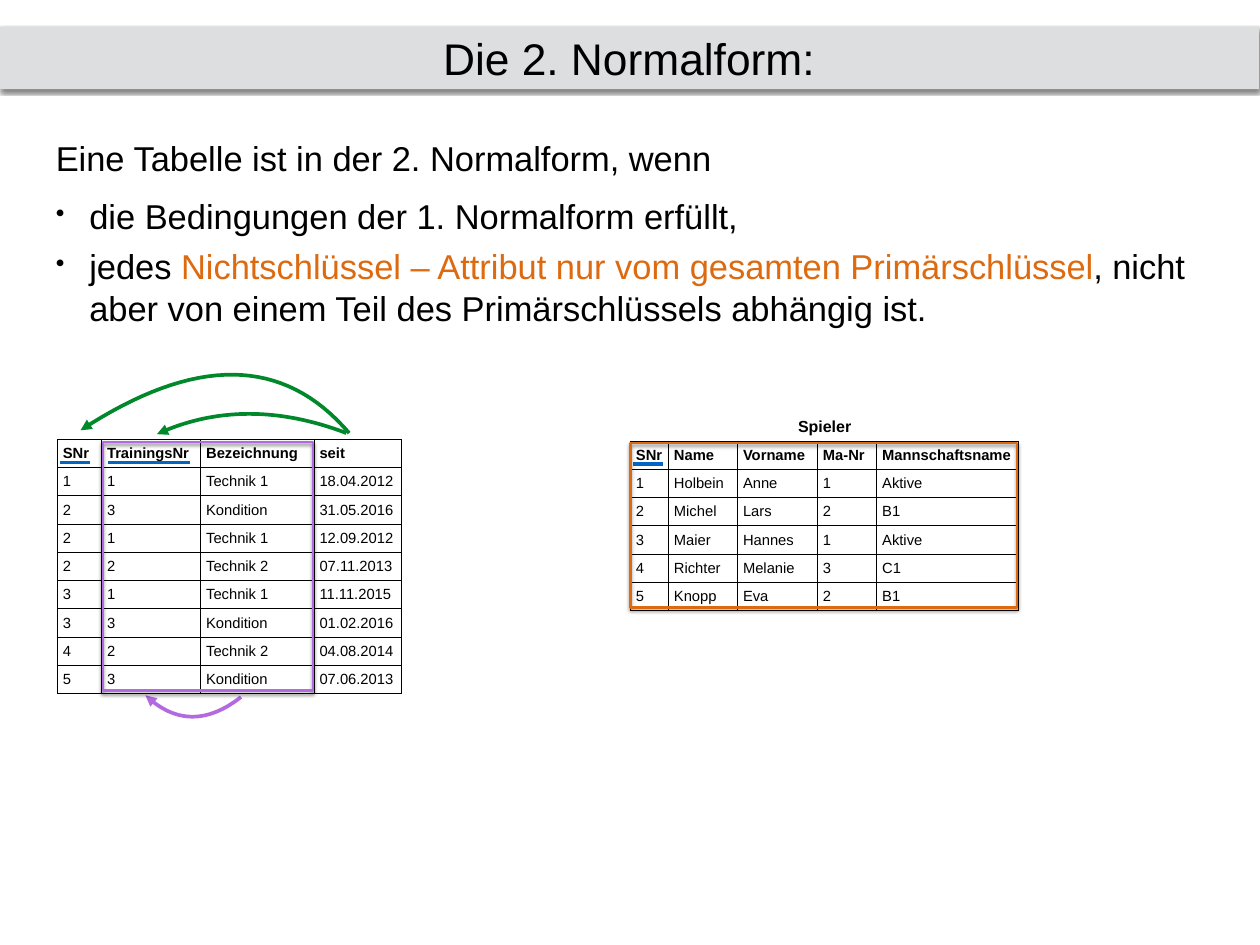
from lxml.etree import SubElement
from pptx import Presentation
from pptx.dml.color import RGBColor
from pptx.enum.shapes import MSO_CONNECTOR, MSO_SHAPE
from pptx.enum.text import MSO_ANCHOR as ANCHOR, MSO_AUTO_SIZE as AUTO, PP_ALIGN as ALIGN
from pptx.oxml.ns import qn
from pptx.util import Cm, Pt

BLACK = RGBColor(0x00, 0x00, 0x00)
WHITE = RGBColor(0xFF, 0xFF, 0xFF)
GREY = RGBColor(0xDC, 0xDE, 0xE0)
ORANGE = RGBColor(0xDE, 0x6A, 0x10)
BLUE = RGBColor(0x03, 0x65, 0xC0)
PURPLE = RGBColor(0xB3, 0x6A, 0xE1)
GREEN = RGBColor(0x00, 0x88, 0x2B)

TRAINING = [
    ("SNr", "TrainingsNr", "Bezeichnung", "seit"),
    ("1", "1", "Technik 1", "18.04.2012"),
    ("2", "3", "Kondition", "31.05.2016"),
    ("2", "1", "Technik 1", "12.09.2012"),
    ("2", "2", "Technik 2", "07.11.2013"),
    ("3", "1", "Technik 1", "11.11.2015"),
    ("3", "3", "Kondition", "01.02.2016"),
    ("4", "2", "Technik 2", "04.08.2014"),
    ("5", "3", "Kondition", "07.06.2013"),
]
SPIELER = [
    ("SNr", "Name", "Vorname", "Ma-Nr", "Mannschaftsname"),
    ("1", "Holbein", "Anne", "1", "Aktive"),
    ("2", "Michel", "Lars", "2", "B1"),
    ("3", "Maier", "Hannes", "1", "Aktive"),
    ("4", "Richter", "Melanie", "3", "C1"),
    ("5", "Knopp", "Eva", "2", "B1"),
]


def xml(parent, tag, **attrs):
    return SubElement(parent, qn(tag), {k: str(v) for k, v in attrs.items()})


def add_text(p, text, size=12, bold=False, color=BLACK, font="Arial"):
    r = p.add_run()
    r.text = text
    f = r.font
    f.name, f.size, f.bold = font, Pt(size), bold
    f.color.rgb = color


class SlideBuilder:
    margin = Cm(0.15)
    row_height = Cm(0.81)
    thick = Pt(3)
    frame_line = Pt(2)

    def __init__(self, prs):
        self.s = prs.slides.add_slide(prs.slide_layouts[5])

    def set_margins(self, box):
        box.margin_left = box.margin_right = self.margin
        box.margin_top = box.margin_bottom = self.margin

    def add_shadow(self, sp):
        sp.shadow.inherit = False
        effects = sp._element.spPr.find(qn("a:effectLst"))
        shadow = xml(effects, "a:outerShdw", blurRad=Pt(3), dist=Pt(2),
                     dir=90 * 60000, rotWithShape=0)
        xml(xml(shadow, "a:srgbClr", val=BLACK), "a:alpha", val=50000)

    def prepare(self, tf):
        tf.word_wrap = True
        tf.auto_size = AUTO.NONE
        tf.vertical_anchor = ANCHOR.MIDDLE
        self.set_margins(tf)

    def title(self, text, x, y, w, h):
        sp = self.s.shapes.title
        sp.left, sp.top, sp.width, sp.height = Cm(x), Cm(y), Cm(w), Cm(h)
        sp.fill.solid()
        sp.fill.fore_color.rgb = GREY
        self.add_shadow(sp)
        self.prepare(sp.text_frame)
        p = sp.text_frame.paragraphs[0]
        p.alignment = ALIGN.CENTER
        add_text(p, text, size=36)

    def body(self, paragraphs, x, y, w, h):
        """Each paragraph: space before in points, bullet flag, (text, colour) runs."""
        tf = self.s.shapes.add_textbox(Cm(x), Cm(y), Cm(w), Cm(h)).text_frame
        self.prepare(tf)
        for i, (before, bullet, runs) in enumerate(paragraphs):
            p = tf.add_paragraph() if i else tf.paragraphs[0]
            p.space_before = Pt(before)
            if bullet:
                pPr = p._p.get_or_add_pPr()
                pPr.set("marL", str(Cm(0.96)))
                pPr.set("indent", str(Cm(-0.96)))
                xml(pPr, "a:buSzPct", val=75000)
                xml(pPr, "a:buChar", char="•")
            for text, color in runs:
                add_text(p, text, size=28, color=color)

    def cell(self, cell, text, edges="LRTB", anchor=ANCHOR.MIDDLE,
             align=ALIGN.LEFT, **fmt):
        self.set_margins(cell)
        cell.vertical_anchor = anchor
        tcPr = cell._tc.get_or_add_tcPr()
        for side in "LRTB":
            ln = xml(tcPr, f"a:ln{side}", w=Pt(1))
            if side in edges:
                xml(xml(ln, "a:solidFill"), "a:srgbClr", val=BLACK)
            else:
                xml(ln, "a:noFill")
        cell.fill.solid()
        cell.fill.fore_color.rgb = WHITE
        p = cell.text_frame.paragraphs[0]
        p.alignment = align
        if text:
            add_text(p, text, **fmt)

    def table(self, rows, widths, x, y, caption=None):
        first = 1 if caption else 0
        n = len(rows) + first
        tbl = self.s.shapes.add_table(n, len(widths), Cm(x), Cm(y), Cm(sum(widths)),
                                      self.row_height * n).table
        tbl.first_row = tbl.horz_banding = False
        for col, w in zip(tbl.columns, widths):
            col.width = Cm(w)
        for row in tbl.rows:
            row.height = self.row_height
        if caption:
            tbl.cell(0, 0).merge(tbl.cell(0, len(widths) - 1))
            for c in range(len(widths)):
                self.cell(tbl.cell(0, c), "" if c else caption, edges="B",
                          anchor=ANCHOR.TOP, align=ALIGN.CENTER, size=13, bold=True)
        for i, values in enumerate(rows):
            for c, text in enumerate(values):
                self.cell(tbl.cell(i + first, c), text, bold=i == 0)

    def underline(self, x1, x2, y):
        cn = self.s.shapes.add_connector(MSO_CONNECTOR.STRAIGHT, Cm(x1), Cm(y), Cm(x2), Cm(y))
        cn.line.color.rgb = BLUE
        cn.line.width = self.thick
        xml(cn._element.spPr, "a:effectLst")

    def frame(self, color, x, y, w, h):
        sp = self.s.shapes.add_shape(MSO_SHAPE.RECTANGLE, Cm(x), Cm(y), Cm(w), Cm(h))
        sp.fill.background()
        sp.line.color.rgb = color
        sp.line.width = self.frame_line
        self.add_shadow(sp)

    def curved_arrow(self, color, *controls, steps=32):
        """Cubic curve through four control points, with an arrowhead at its end."""
        points = []
        for i in range(steps + 1):
            t = i / steps
            weights = ((1 - t) ** 3, 3 * t * (1 - t) ** 2, 3 * t * t * (1 - t), t ** 3)
            points.append(tuple(Cm(sum(k * v for k, v in zip(weights, axis)))
                                for axis in zip(*controls)))
        fb = self.s.shapes.build_freeform(*points[0])
        fb.add_line_segments(points[1:], close=False)
        sp = fb.convert_to_shape()
        sp.fill.background()
        sp.shadow.inherit = False
        sp.line.color.rgb = color
        sp.line.width = self.thick
        xml(sp.line._get_or_add_ln(), "a:tailEnd", type="triangle")


def main():
    prs = Presentation()
    prs.slide_width, prs.slide_height = Cm(36.12), Cm(27.1)
    b = SlideBuilder(prs)

    # Title and definition
    b.title("Die 2. Normalform:", -0.03, 0.76, 36.12, 1.8)
    b.body([
        (0, False, [("Eine Tabelle ist in der 2. Normalform, wenn", BLACK)]),
        (14, True, [("die Bedingungen der 1. Normalform erfüllt,", BLACK)]),
        (7, True, [
            ("jedes ", BLACK),
            ("Nichtschlüssel – Attribut nur vom gesamten Primärschlüssel", ORANGE),
            (", nicht aber von einem Teil des Primärschlüssels abhängig ist.", BLACK)]),
    ], 1.45, 3.76, 32.72, 5.82)

    # Tables with underlined keys
    b.table(TRAINING, (1.27, 2.84, 3.25, 2.51), 1.65, 12.6)
    b.underline(1.73, 2.57, 13.26)
    b.underline(3.1, 5.46, 13.26)
    b.table(SPIELER, (1.09, 1.98, 2.29, 1.7, 4.06), 18.08, 11.84, caption="Spieler")
    b.underline(18.16, 19, 13.31)

    # Frames and dependency arrows
    b.frame(ORANGE, 18.08, 12.7, 11.07, 4.72)
    b.curved_arrow(PURPLE, (6.91, 19.99), (5.94, 20.75), (5.03, 20.75), (4.17, 19.94))
    b.frame(PURPLE, 2.95, 12.67, 6.02, 7.14)
    b.curved_arrow(GREEN, (9.93, 12.42), (8, 11.68), (6.17, 11.68), (4.5, 12.45))
    b.curved_arrow(GREEN, (10.01, 12.42), (8.13, 10.21), (5.59, 10.19), (2.31, 12.34))

    prs.save("out.pptx")


if __name__ == "__main__":
    main()
